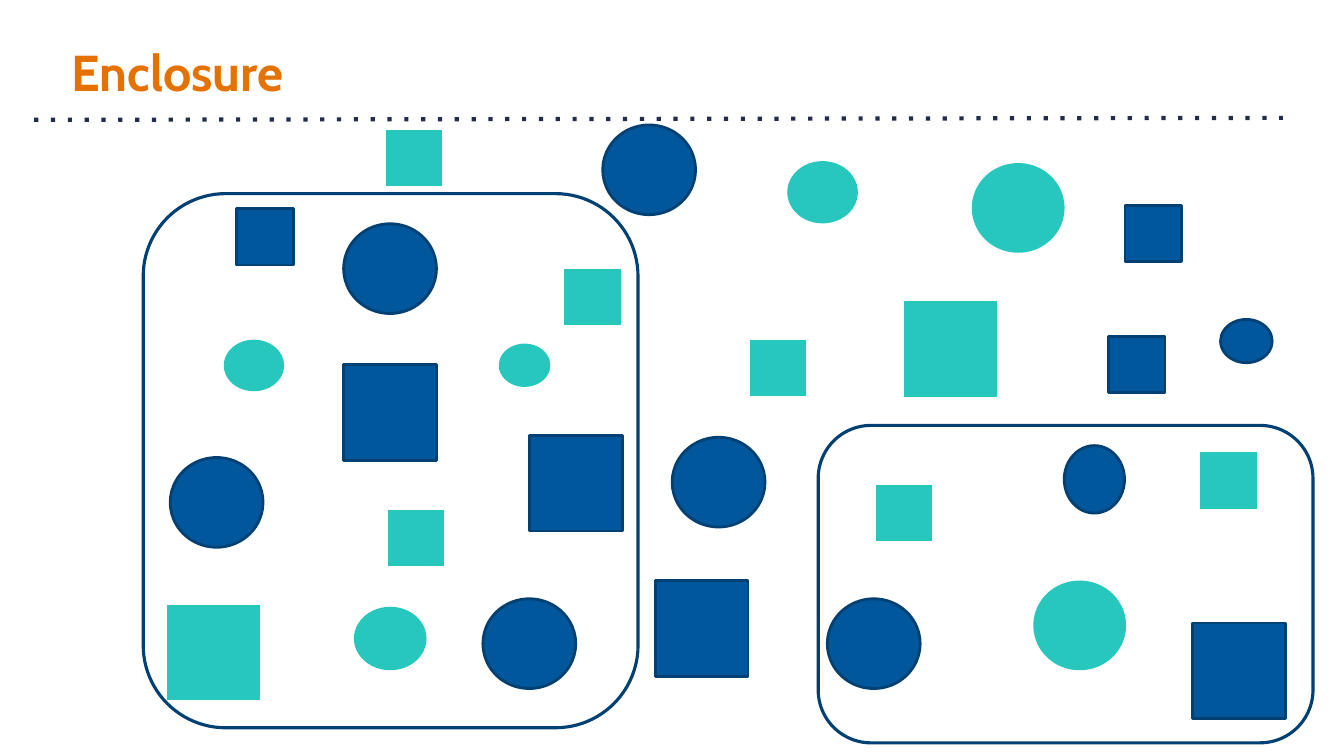
from dataclasses import dataclass

from lxml.etree import SubElement
from pptx import Presentation
from pptx.dml.color import RGBColor
from pptx.enum.dml import MSO_LINE
from pptx.enum.shapes import MSO_CONNECTOR, MSO_SHAPE
from pptx.enum.text import MSO_ANCHOR, PP_ALIGN
from pptx.oxml.ns import qn
from pptx.util import Cm, Pt

COLOURS = {
    "title": "E57200",
    "rule": "232D4B",
    "blue": "01579B",
    "outline": "014073",
    "teal": "27C7BD",
}
SQUARE = MSO_SHAPE.FLOWCHART_PROCESS
CIRCLE = MSO_SHAPE.OVAL
FRAME = MSO_SHAPE.ROUNDED_RECTANGLE


@dataclass(frozen=True)
class Group:
    """Equal shapes of one size and colour, at several places (cm)."""

    kind: MSO_SHAPE
    width: float
    height: float
    places: list[tuple[float, float]]
    fill: str | None = None
    outline_width: float = 0


GROUPS = [
    # Squares
    Group(SQUARE, 2.34, 2.41, [(13.34, 10.97), (8.66, 9.19), (16.51, 14.63), (30.05, 15.7)],
          "blue", 2),
    Group(SQUARE, 2.34, 2.41, [(22.78, 7.59), (4.22, 15.24)], "teal"),
    Group(SQUARE, 1.42, 1.42, [(28.35, 5.18), (5.97, 5.26), (27.94, 8.48)], "blue", 2),
    Group(SQUARE, 1.42, 1.42, [(18.9, 8.56), (14.22, 6.78), (22.07, 12.22),
                               (9.78, 12.85), (9.73, 3.28), (30.25, 11.4)], "teal"),
    # Large circles
    Group(CIRCLE, 2.34, 2.26, [(8.66, 5.64), (16.94, 11.02), (4.29, 11.53),
                               (12.17, 15.09), (15.19, 3.15), (20.85, 15.09)], "blue", 2),
    Group(CIRCLE, 2.34, 2.26, [(24.49, 4.11), (26.04, 14.63)], "teal"),
    # Small ellipses
    Group(CIRCLE, 1.52, 1.7, [(26.82, 11.23)], "blue", 2),
    Group(CIRCLE, 1.3, 1.09, [(30.76, 8.05)], "blue", 2),
    Group(CIRCLE, 1.78, 1.57, [(19.84, 4.06)], "teal"),
    Group(CIRCLE, 1.83, 1.6, [(8.92, 15.29)], "teal"),
    Group(CIRCLE, 1.52, 1.3, [(5.64, 8.56)], "teal"),
    Group(CIRCLE, 1.3, 1.09, [(12.57, 8.66)], "teal"),
    # Enclosing frames
    Group(FRAME, 12.47, 13.46, [(3.61, 4.88)], outline_width=2.25),
    Group(FRAME, 12.47, 8, [(20.62, 10.72)], outline_width=2.25),
]


def colour(name: str) -> RGBColor:
    return RGBColor.from_string(COLOURS[name])


def write_text(frame, text: str, *, font: str, size: float, fill: str, bold: bool = False) -> None:
    frame.word_wrap = True
    frame.vertical_anchor = MSO_ANCHOR.MIDDLE
    frame.margin_left = frame.margin_right = Cm(0.25)
    frame.margin_top = frame.margin_bottom = Cm(0.25)
    para = frame.paragraphs[0]
    para.alignment = PP_ALIGN.LEFT
    span = para.add_run()
    span.text = text
    span.font.name = font
    span.font.size = Pt(size)
    span.font.bold = bold
    span.font.color.rgb = colour(fill)


def add_title(page, text: str) -> None:
    title = page.shapes.title
    title.left, title.top = Cm(1.55), Cm(0.61)
    title.width, title.height = Cm(30.78), Cm(2.36)
    write_text(title.text_frame, text, font="Cabin", size=36, fill="title", bold=True)


def add_dotted_rule(page) -> None:
    rule = page.shapes.add_connector(
        MSO_CONNECTOR.STRAIGHT, Cm(0.86), Cm(3.02), Cm(32.33), Cm(2.97))
    rule.line.color.rgb = colour("rule")
    rule.line.width = Pt(3)
    rule.line.dash_style = MSO_LINE.ROUND_DOT
    properties = rule._element.spPr
    # The wide-spaced dot has no python-pptx constant
    next(properties.iter(qn("a:prstDash"))).set("val", "dot")
    SubElement(properties, qn("a:effectLst"))


def add_group(page, group: Group) -> None:
    for left, top in group.places:
        shape = page.shapes.add_shape(
            group.kind, Cm(left), Cm(top), Cm(group.width), Cm(group.height))
        shape.shadow.inherit = False
        if group.fill:
            shape.fill.solid()
            shape.fill.fore_color.rgb = colour(group.fill)
        else:
            shape.fill.background()
        if group.outline_width:
            shape.line.color.rgb = colour("outline")
            shape.line.width = Pt(group.outline_width)
        else:
            shape.line.fill.background()


def main() -> None:
    deck = Presentation()
    deck.slide_width, deck.slide_height = Cm(33.87), Cm(19.05)
    page = deck.slides.add_slide(deck.slide_layouts.get_by_name("Title Only"))
    add_dotted_rule(page)
    add_title(page, "Enclosure")
    for group in GROUPS:
        add_group(page, group)
    deck.save("out.pptx")


if __name__ == "__main__":
    main()
